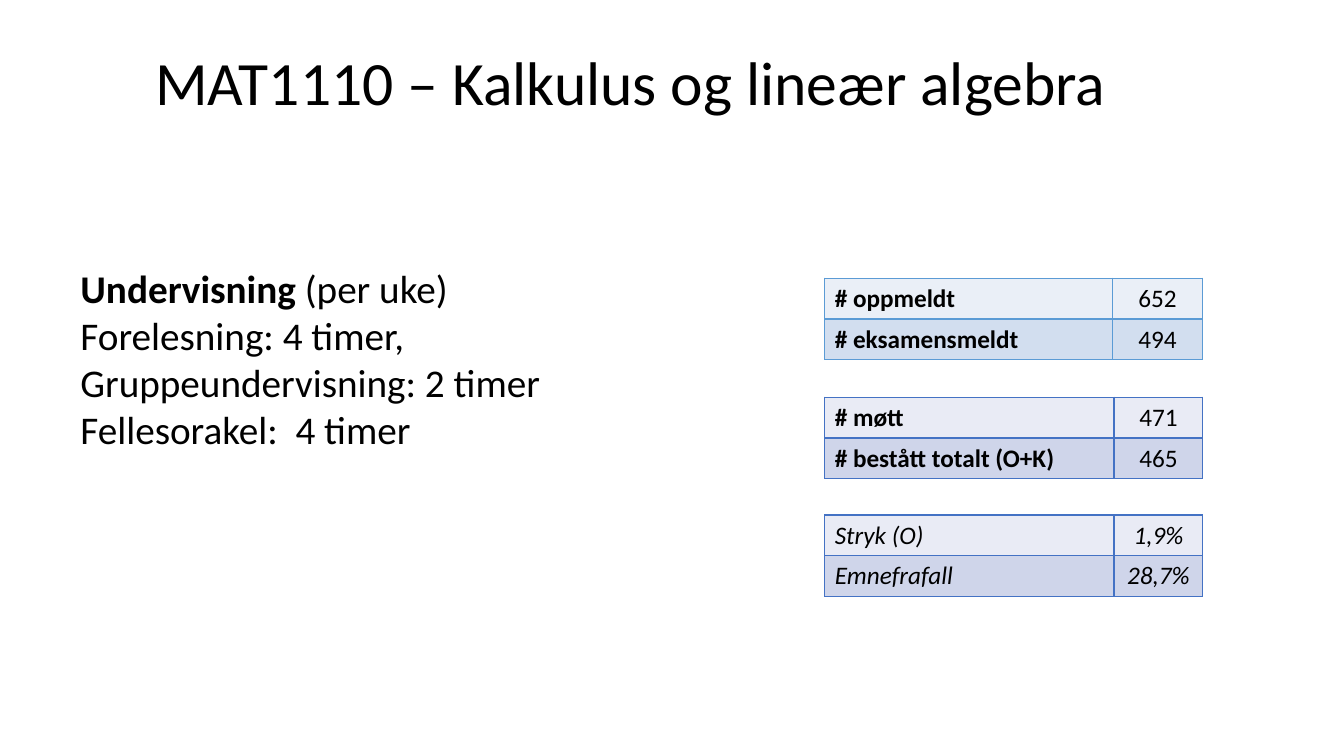
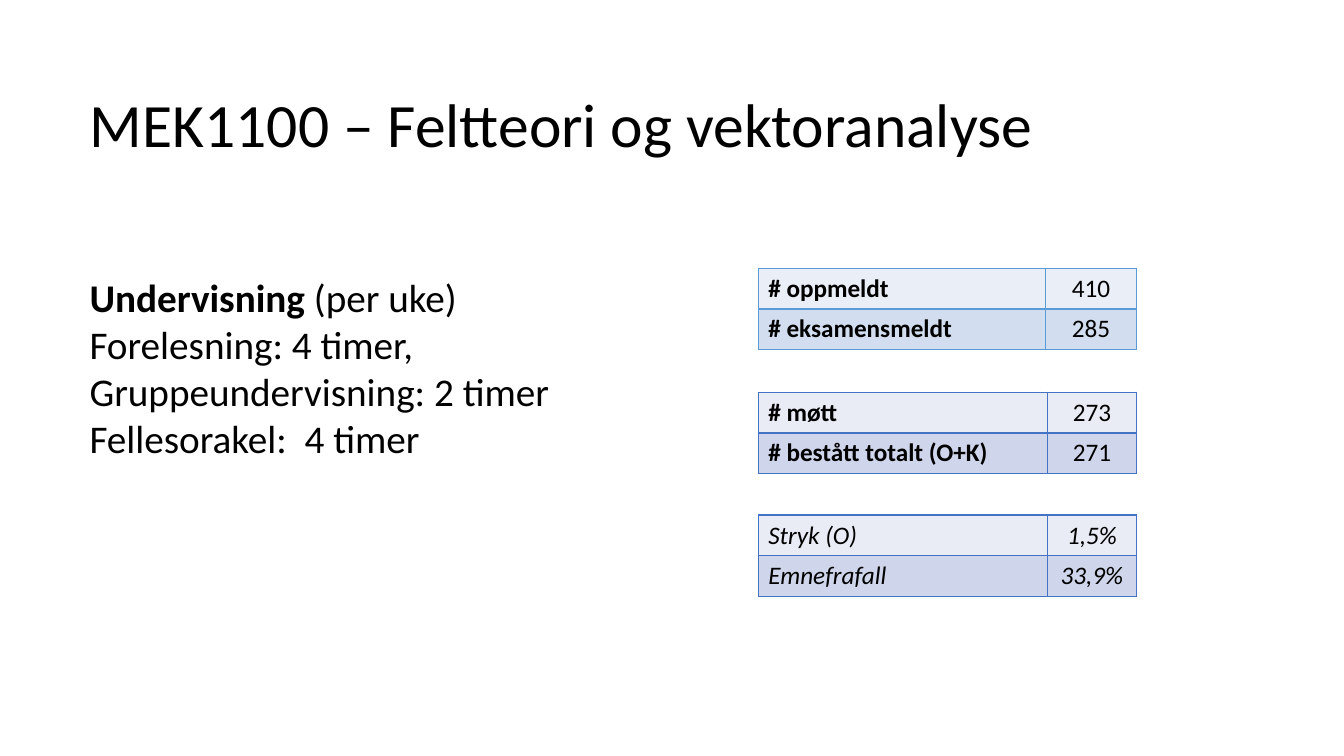
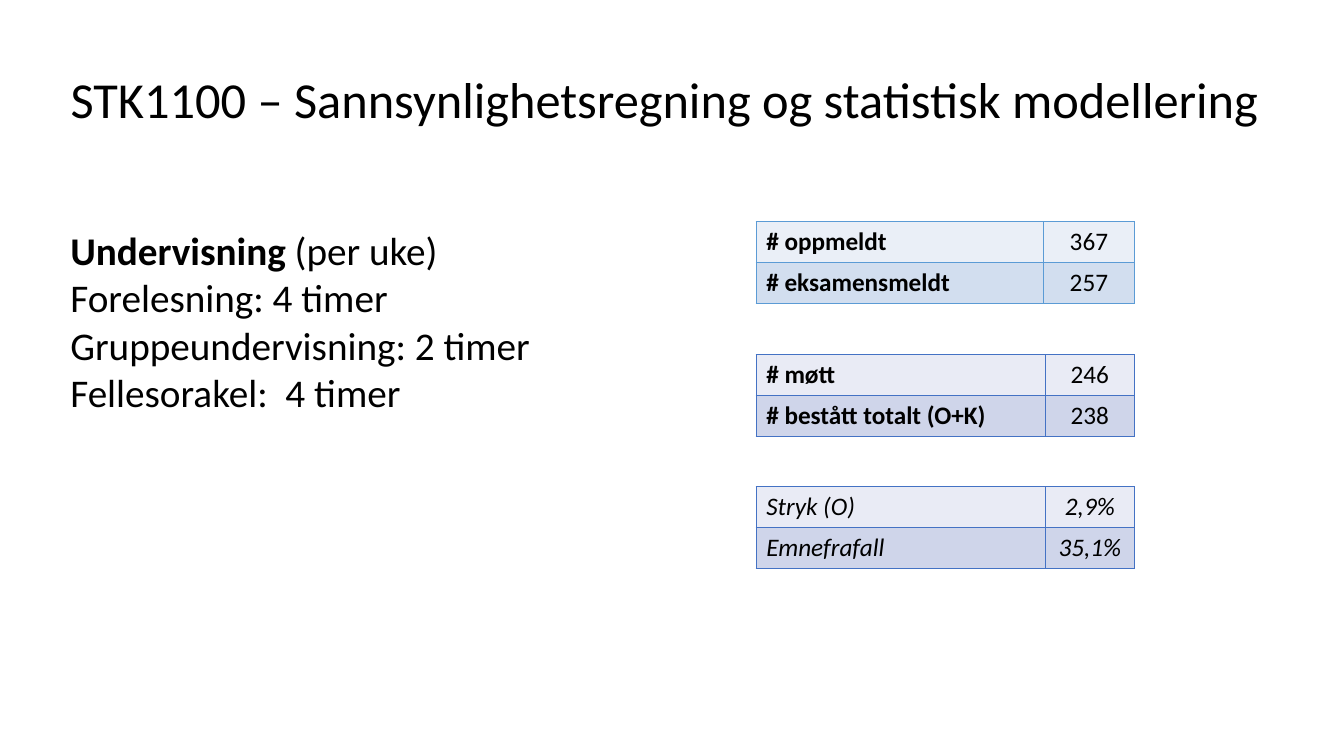
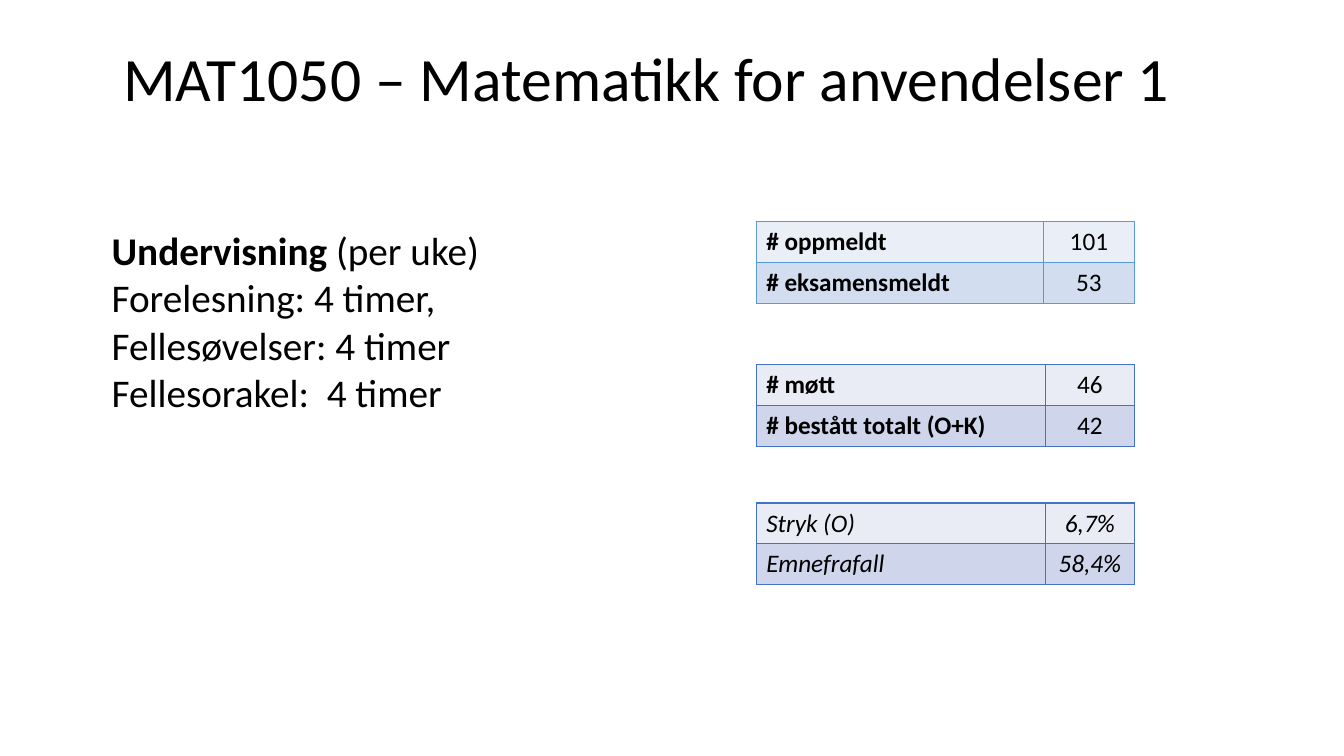
from dataclasses import dataclass

from lxml import etree
from pptx import Presentation
from pptx.dml.color import RGBColor
from pptx.enum.text import MSO_ANCHOR, MSO_AUTO_SIZE, PP_ALIGN
from pptx.oxml.ns import qn
from pptx.util import Emu, Pt

LEFT, MID = PP_ALIGN.LEFT, PP_ALIGN.CENTER
TOP = MSO_ANCHOR.TOP
GROW = MSO_AUTO_SIZE.SHAPE_TO_FIT_TEXT

FONT = "Calibri"
BLACK = RGBColor(0x00, 0x00, 0x00)
SKY = RGBColor(0x5B, 0x9B, 0xD5)
BLUE = RGBColor(0x44, 0x72, 0xC4)
SKY_ROWS = RGBColor(0xEA, 0xEF, 0xF7), RGBColor(0xD2, 0xDE, 0xEF)
BLUE_ROWS = RGBColor(0xE9, 0xEB, 0xF5), RGBColor(0xCF, 0xD5, 0xEA)

TITLE_ONLY = 5
TABLE_W, TABLE_H = 375, 81

# Each table: row labels, border, row fills, label column width, italic
TABLES = [
    (("# oppmeldt", "# eksamensmeldt"), SKY, SKY_ROWS, 285, False),
    (("# møtt", "# bestått totalt (O+K)"), BLUE, BLUE_ROWS, 287, False),
    (("Stryk (O)", "Emnefrafall"), BLUE, BLUE_ROWS, 287, True),
]


@dataclass
class Course:
    title: str
    size: int
    head: tuple    # title box: left, top, width, height
    hours: list
    body: tuple    # teaching box: left, top, width, height
    left: int      # left edge of the tables
    tops: tuple    # top edge of each table
    stats: list    # two values for each table


COURSES = [
    Course("MAT1110 – Kalkulus og lineær algebra", 44, (144, 39, 1092, 84),
           ["Forelesning: 4 timer,", "Gruppeundervisning: 2 timer",
            "Fellesorakel:  4 timer"], (70, 257, 516, 199),
           818, (276, 394, 511),
           [("652", "494"), ("471", "465"), ("1,9%", "28,7%")]),
    Course("MEK1100 – Feltteori og vektoranalyse", 44, (79, 80, 1254, 84),
           ["Forelesning: 4 timer,", "Gruppeundervisning: 2 timer",
            "Fellesorakel:  4 timer"], (79, 266, 516, 199),
           752, (266, 389, 511),
           [("410", "285"), ("273", "271"), ("1,5%", "33,9%")]),
    Course("STK1100 – Sannsynlighetsregning og statistisk modellering", 36,
           (60, 63, 1228, 71),
           ["Forelesning: 4 timer", "Gruppeundervisning: 2 timer",
            "Fellesorakel:  4 timer"], (60, 220, 516, 199),
           750, (220, 352, 483),
           [("367", "257"), ("246", "238"), ("2,9%", "35,1%")]),
    Course("MAT1050 – Matematikk for anvendelser 1", 44, (112, 35, 1221, 84),
           ["Forelesning: 4 timer,", "Fellesøvelser: 4 timer",
            "Fellesorakel:  4 timer"], (101, 220, 426, 199),
           750, (220, 362, 499),
           [("101", "53"), ("46", "42"), ("6,7%", "58,4%")]),
]


def px(n):
    """Turn px (100 to the inch) into EMU."""
    return Emu(n * 9144)


def style(para, size, bold=None, italic=None, align=LEFT):
    para.alignment = align
    font = para.font
    font.name, font.size, font.color.rgb = FONT, Pt(size), BLACK
    font.bold, font.italic = bold, italic


def fit(frame):
    frame.word_wrap = True
    frame.auto_size = GROW
    frame.vertical_anchor = TOP


def add_title(slide, text, size, box):
    title = slide.shapes.title
    title.left, title.top, title.width, title.height = map(px, box)
    frame = title.text_frame
    fit(frame)
    frame.text = text
    style(frame.paragraphs[0], size)


def add_hours(slide, hours, box):
    frame = slide.shapes.add_textbox(*map(px, box)).text_frame
    fit(frame)
    # Heading with its lead word in bold
    head = frame.paragraphs[0]
    lead = head.add_run()
    lead.text, lead.font.bold = "Undervisning ", True
    head.add_run().text = "(per uke)"
    for line in hours:
        frame.add_paragraph().text = line
    for para in frame.paragraphs:
        style(para, 28)


def add_border(cell, color):
    props = cell._tc.get_or_add_tcPr()
    for side in ("lnL", "lnR", "lnT", "lnB"):
        line = etree.SubElement(props, qn("a:" + side), w=str(Pt(1)))
        fill = etree.SubElement(line, qn("a:solidFill"))
        etree.SubElement(fill, qn("a:srgbClr"), val=str(color))


def add_stats(slide, left, top, values, kind):
    labels, border, fills, label_w, italic = kind
    table = slide.shapes.add_table(
        2, 2, px(left), px(top), px(TABLE_W), px(TABLE_H)).table
    table.first_row = table.horz_banding = False
    for col, width in zip(table.columns, (label_w, TABLE_W - label_w)):
        col.width = px(width)
    for row, pair, fill in zip(table.rows, zip(labels, values), fills):
        for i, (cell, text) in enumerate(zip(row.cells, pair)):
            cell.text = text
            style(cell.text_frame.paragraphs[0], 18,
                  bold=i == 0 and not italic, italic=italic,
                  align=MID if i else LEFT)
            add_border(cell, border)
            cell.fill.solid()
            cell.fill.fore_color.rgb = fill


def add_course(deck, course):
    slide = deck.slides.add_slide(deck.slide_layouts[TITLE_ONLY])
    add_title(slide, course.title, course.size, course.head)
    add_hours(slide, course.hours, course.body)
    for top, values, kind in zip(course.tops, course.stats, TABLES):
        add_stats(slide, course.left, top, values, kind)


def main():
    deck = Presentation()
    deck.slide_width, deck.slide_height = px(1333), px(750)
    for course in COURSES:
        add_course(deck, course)
    deck.save("out.pptx")


if __name__ == "__main__":
    main()
